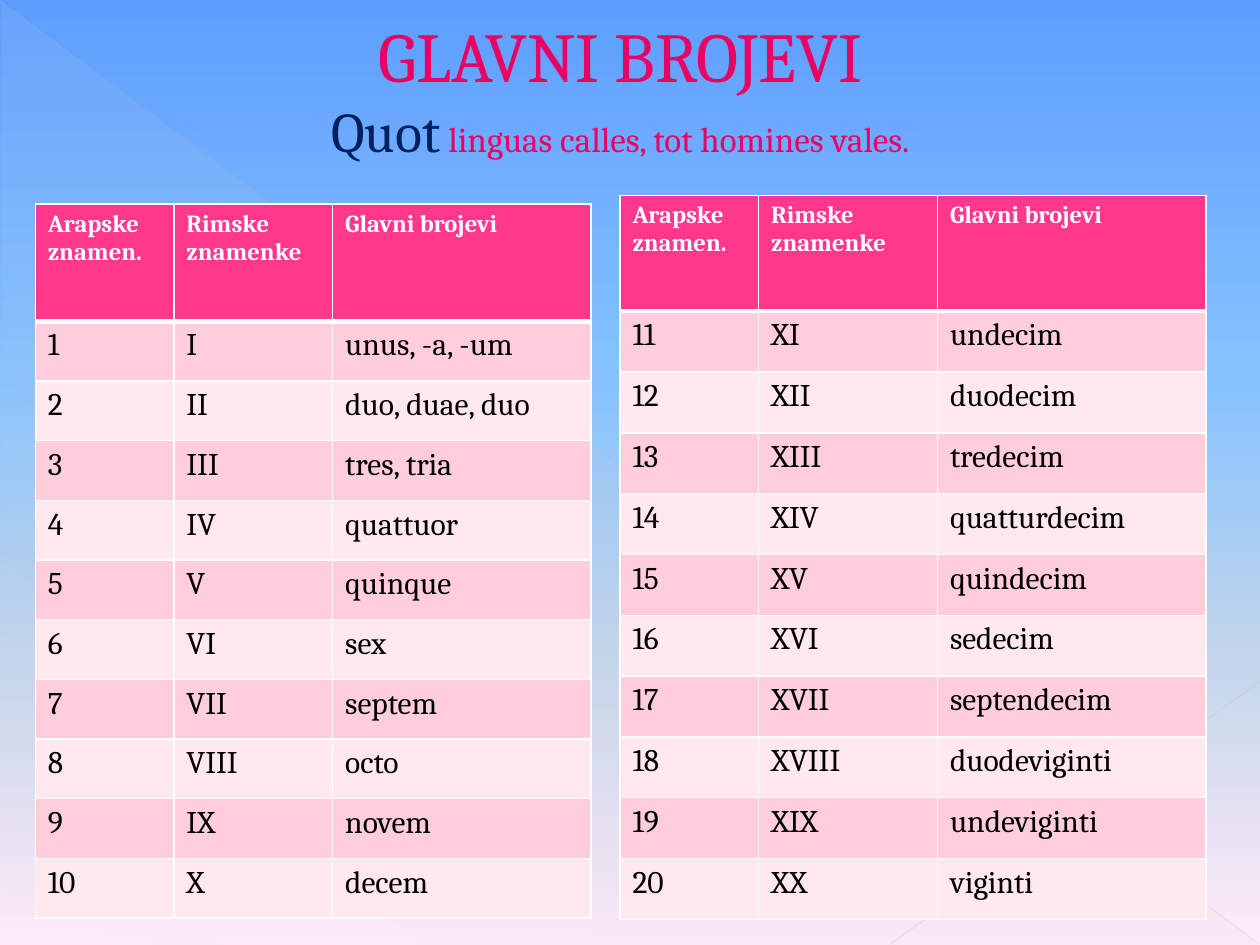
from dataclasses import dataclass

from lxml import etree
from pptx import Presentation
from pptx.dml.color import RGBColor
from pptx.enum.shapes import MSO_CONNECTOR, MSO_SHAPE
from pptx.enum.text import MSO_ANCHOR, PP_ALIGN
from pptx.oxml import parse_xml
from pptx.oxml.ns import nsdecls, qn
from pptx.util import Inches, Pt

STRAIGHT = MSO_CONNECTOR.STRAIGHT
TRIANGLE = MSO_SHAPE.RIGHT_TRIANGLE
MIDDLE = MSO_ANCHOR.MIDDLE
CENTER = PP_ALIGN.CENTER


@dataclass(frozen=True)
class Theme:
    font: str = "Cambria"
    accent: str = "E90062"
    outline: str = "B12761"
    navy: str = "002060"
    white: str = "FFFFFF"
    black: str = "000000"
    header: str = "FF388C"
    bands: tuple = ("FFCEDA", "FFE8EE")
    sky: tuple = ((0, "5E9EFF", 100), (40, "85C2FF", 100),
                  (70, "C4D6EB", 100), (100, "FFEBFA", 100))
    haze: tuple = ((0, "D2D2D2", 10), (70, "D2D2D2", 8), (100, "D2D2D2", 1))
    title: int = 40
    motto: int = 32
    motto_small: int = 20
    head: int = 14
    body: int = 18


T = Theme()

HEADINGS = ("Arapske znamen.", "Rimske znamenke", "Glavni brojevi")
ONE_TO_TEN = (
    ("1", "I", "unus, -a, -um"), ("2", "II", "duo, duae, duo"),
    ("3", "III", "tres, tria"), ("4", "IV", "quattuor"),
    ("5", "V", "quinque"), ("6", "VI", "sex"), ("7", "VII", "septem"),
    ("8", "VIII", "octo"), ("9", "IX", "novem"), ("10", "X", "decem"),
)
ELEVEN_TO_TWENTY = (
    ("11", "XI", "undecim"), ("12", "XII", "duodecim"),
    ("13", "XIII", "tredecim"), ("14", "XIV", "quatturdecim"),
    ("15", "XV", "quindecim"), ("16", "XVI", "sedecim"),
    ("17", "XVII", "septendecim"), ("18", "XVIII", "duodeviginti"),
    ("19", "XIX", "undeviginti"), ("20", "XX", "viginti"),
)


def rgb(color):
    return RGBColor.from_string(color)


def set_gradient(fill, parent, stops, angle):
    """Give a fill its colour stops (percent, colour, opacity) and angle."""
    fill.gradient()
    old = parent.find(qn("a:gradFill"))
    gs = "".join(
        f'<a:gs pos="{pos * 1000}"><a:srgbClr val="{color}">'
        f'<a:alpha val="{alpha * 1000}"/></a:srgbClr></a:gs>'
        for pos, color, alpha in stops)
    parent.replace(old, parse_xml(
        f'<a:gradFill {nsdecls("a")} rotWithShape="1"><a:gsLst>{gs}</a:gsLst>'
        f'<a:lin ang="{angle * 60000}" scaled="0"/></a:gradFill>'))


def add_line(s, start, end, color, width, opacity):
    line = s.shapes.add_connector(
        STRAIGHT, *(Inches(v) for v in (*start, *end)))
    line.line.width = Pt(width)
    line.line.color.rgb = rgb(color)
    spPr = line._element.spPr
    clr = spPr.find(".//" + qn("a:srgbClr"))
    etree.SubElement(clr, qn("a:alpha")).set("val", str(opacity * 1000))
    etree.SubElement(spPr, qn("a:effectLst"))


def add_run(p, text, color, **formats):
    r = p.add_run()
    r.text = text
    r.font.color.rgb = rgb(color)
    for name, value in {"name": T.font, **formats}.items():
        setattr(r.font, name, value)
    return r


def add_backdrop(s):
    set_gradient(s.background.fill, s._element.cSld.bg.bgPr, T.sky, 90)
    sp = s.shapes.add_shape(
        TRIANGLE, Inches(0.01), Inches(0.02), Inches(9.98), Inches(7.48))
    sp.shadow.inherit = False
    sp.line.fill.background()
    set_gradient(sp.fill, sp._element.spPr, T.haze, 133)
    add_line(s, (0, 0.01), (9.99, 7.49), "BFBFBF", 0.39, 35)
    add_line(s, (10, 5.41), (7.07, 7.49), "C6C6C6", 0.47, 45)


def add_title(s):
    sp = s.shapes.add_textbox(
        Inches(0.83), Inches(0.52), Inches(8.19), Inches(1.02))
    tf = sp.text_frame
    for name, value in {"word_wrap": True, "vertical_anchor": MIDDLE}.items():
        setattr(tf, name, value)
    p = tf.paragraphs[0]
    p.alignment = CENTER
    lines = (
        (("GLAVNI BROJEVI", T.accent, T.title),),
        (("Quot", T.navy, T.motto),
         (" linguas calles, tot homines vales.", T.accent, T.motto_small)),
    )
    for line in lines:
        for text, color, size in line:
            r = add_run(p, text, color, size=Pt(size))
            r.font._element.insert(0, parse_xml(
                f'<a:ln {nsdecls("a")} w="6350"><a:solidFill>'
                f'<a:srgbClr val="{T.outline}"/></a:solidFill></a:ln>'))
        p.add_line_break()
    # The last line break keeps the height of a title line
    end = etree.SubElement(p._p, qn("a:endParaRPr"))
    end.set("sz", str(T.title * 100))
    etree.SubElement(end, qn("a:latin")).set("typeface", T.font)


def set_borders(cell, top, bottom):
    tcPr = cell._tc.get_or_add_tcPr()
    sides = {"lnL": 1, "lnR": 1, "lnT": top, "lnB": bottom}
    for i, (side, width) in enumerate(sides.items()):
        tcPr.insert(i, parse_xml(
            f'<a:{side} {nsdecls("a")} w="{Pt(width)}"><a:solidFill>'
            f'<a:srgbClr val="{T.white}"/></a:solidFill></a:{side}>'))


def add_number_table(s, left, top, height, header_height, widths, numbers):
    rows = (HEADINGS, *numbers)
    table = s.shapes.add_table(
        len(rows), len(widths), Inches(left), Inches(top),
        Inches(sum(widths)), Inches(height)).table
    for column, width in zip(table.columns, widths):
        column.width = Inches(width)
    row_height = (height - header_height) / len(numbers)
    for i, texts in enumerate(rows):
        is_head = i == 0
        table.rows[i].height = Inches(header_height if is_head else row_height)
        for j, text in enumerate(texts):
            cell = table.cell(i, j)
            cell.fill.solid()
            cell.fill.fore_color.rgb = rgb(
                T.header if is_head else T.bands[(i - 1) % 2])
            # The heavy rule lies between the header and the first row
            set_borders(cell, 3 if i == 1 else 1, 3 if is_head else 1)
            add_run(cell.text_frame.paragraphs[0], text,
                    T.white if is_head else T.black, bold=is_head,
                    size=Pt(T.head if is_head else T.body))


def main():
    prs = Presentation()
    prs.slide_width, prs.slide_height = Inches(10), Inches(7.5)
    s = prs.slides.add_slide(prs.slide_layouts[6])
    add_backdrop(s)
    add_title(s)
    add_number_table(s, 0.28, 1.62, 5.67, 0.93, (1.1, 1.26, 2.05), ONE_TO_TEN)
    add_number_table(s, 4.92, 1.55, 5.75, 0.92, (1.1, 1.42, 2.13),
                     ELEVEN_TO_TWENTY)
    prs.save("out.pptx")


if __name__ == "__main__":
    main()
